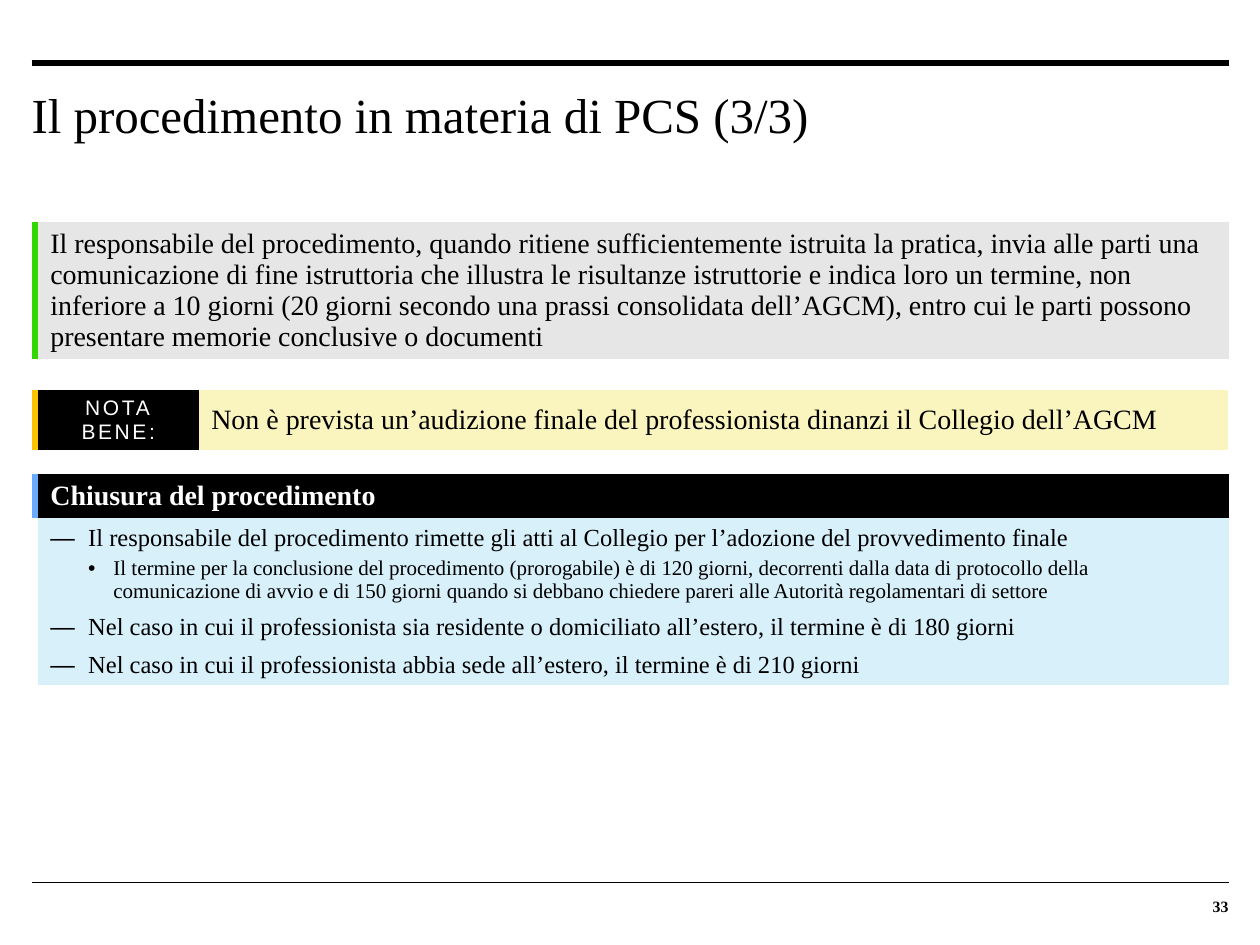
import pptx
import pptx.dml.color
import pptx.enum.shapes
import pptx.enum.text
import pptx.oxml.ns
import pptx.util
from lxml import etree

Pt = pptx.util.Pt
qn = pptx.oxml.ns.qn
ALIGN = pptx.enum.text.PP_ALIGN
ANCHOR = pptx.enum.text.MSO_ANCHOR

COLORS = {
    "black": "000000", "white": "FFFFFF",
    "green": "32D700", "gray": "E6E6E6",
    "amber": "FCC300", "yellow": "FAF5BE",
    "blue": "68ABFF", "light_blue": "D7F0FA",
}
SERIF, SANS = "Times New Roman", "Arial"
LEFT, WIDTH, STRIPE = 18, 684, 3.6
NO_STYLE = "{2D5ABB26-0587-4C30-8999-92F81FD0307C}"

# Bullet levels: mark, left margin, hanging indent, text size
DASH = ("—", 21.6, 21.6, 14)
DOT = ("•", 36, 14.4, 12)
CLOSING_POINTS = [
    (DASH, 3, "Il responsabile del procedimento rimette gli atti al Collegio per "
              "l’adozione del provvedimento finale"),
    (DOT, 6, "Il termine per la conclusione del procedimento (prorogabile) è di 120 giorni, "
             "decorrenti dalla data di protocollo della comunicazione di avvio e di 150 giorni "
             "quando si debbano chiedere pareri alle Autorità regolamentari di settore"),
    (DASH, 6, "Nel caso in cui il professionista sia residente o domiciliato all’estero, "
              "il termine è di 180 giorni"),
    (DASH, 3, "Nel caso in cui il professionista abbia sede all’estero, "
              "il termine è di 210 giorni"),
]
END_NOTICE = (
    "Il responsabile del procedimento, quando ritiene sufficientemente istruita la pratica, "
    "invia alle parti una comunicazione di fine istruttoria che illustra le risultanze "
    "istruttorie e indica loro un termine, non inferiore a 10 giorni (20 giorni secondo una "
    "prassi consolidata dell’AGCM), entro cui le parti possono presentare memorie conclusive "
    "o documenti"
)


def rgb(name):
    return pptx.dml.color.RGBColor.from_string(COLORS[name])


def apply(target, values):
    for name, value in values.items():
        setattr(target, name, value)


def write(paragraph, text, size, color="black", font=SERIF, bold=False, align=ALIGN.LEFT):
    paragraph.alignment = align
    run = paragraph.add_run()
    run.text = text
    apply(run.font, {"name": font, "size": Pt(size), "bold": bold})
    run.font.color.rgb = rgb(color)
    return run


def format_frame(frame, anchor):
    apply(frame, {"margin_left": 0, "margin_right": 0, "margin_top": 0, "margin_bottom": 0,
                  "word_wrap": True, "vertical_anchor": anchor,
                  "auto_size": pptx.enum.text.MSO_AUTO_SIZE.NONE})


def add_rule(slide, top, weight):
    line = slide.shapes.add_connector(pptx.enum.shapes.MSO_CONNECTOR.STRAIGHT,
                                      Pt(LEFT), Pt(top), Pt(LEFT + WIDTH), Pt(top))
    line.line.width = Pt(weight)
    line.line.color.rgb = rgb("black")
    etree.SubElement(line._element.spPr, qn("a:effectLst"))


def fill_cell(cell, color):
    cell.fill.solid()
    cell.fill.fore_color.rgb = rgb(color)


def add_band(slide, top, stripe_color, widths, heights):
    """Add a table with a thin coloured stripe at its left and return it."""
    table = slide.shapes.add_table(len(heights), len(widths) + 1, Pt(LEFT), Pt(top),
                                   Pt(WIDTH), Pt(sum(heights))).table
    apply(table, {"first_row": False, "horz_banding": False})
    table._tbl.tblPr.find(qn("a:tableStyleId")).text = NO_STYLE
    for column, width in zip(table.columns, [STRIPE, *widths]):
        column.width = Pt(width)
    for row, height in zip(table.rows, heights):
        row.height = Pt(height)
        for cell in row.cells:
            cell.vertical_anchor = ANCHOR.MIDDLE
        # Small end mark so that the empty stripe cell does not stretch the row
        stripe = row.cells[0]
        apply(stripe, {"margin_left": 0, "margin_right": 0})
        end_mark = etree.SubElement(stripe.text_frame.paragraphs[0]._p, qn("a:endParaRPr"))
        end_mark.set("sz", "800")
    fill_cell(table.cell(0, 0), stripe_color)
    return table


def write_cell(cell, fill, text, size, **style):
    fill_cell(cell, fill)
    return write(cell.text_frame.paragraphs[0], text, size, **style)


def write_bullets(cell, points):
    frame = cell.text_frame
    for index, ((mark, margin, hanging, size), after, text) in enumerate(points):
        paragraph = frame.add_paragraph() if index else frame.paragraphs[0]
        paragraph.space_after = Pt(after)
        properties = paragraph._p.get_or_add_pPr()
        properties.set("marL", str(Pt(margin)))
        properties.set("indent", str(-Pt(hanging)))
        etree.SubElement(properties, qn("a:buFont")).set("typeface", SANS)
        etree.SubElement(properties, qn("a:buChar")).set("char", mark)
        write(paragraph, text, size)


def add_title(slide, text):
    title = slide.shapes.title
    apply(title, {"left": Pt(LEFT), "top": Pt(48.24), "width": Pt(WIDTH), "height": Pt(71.28)})
    format_frame(title.text_frame, ANCHOR.TOP)
    write(title.text_frame.paragraphs[0], text, 28)


def add_page_number(slide, text):
    box = slide.shapes.add_textbox(Pt(654), Pt(507), Pt(48), Pt(16.5))
    format_frame(box.text_frame, ANCHOR.BOTTOM)
    write(box.text_frame.paragraphs[0], text, 9, bold=True, align=ALIGN.RIGHT)


def main():
    presentation = pptx.Presentation()
    apply(presentation, {"slide_width": Pt(720), "slide_height": Pt(540)})
    slide = presentation.slides.add_slide(presentation.slide_layouts[5])

    # Frame of the page
    add_page_number(slide, "33")
    add_rule(slide, 36, 3)
    add_rule(slide, 504.5, 0.5)
    add_title(slide, "Il procedimento in materia di PCS (3/3)")

    # End of the inquiry
    notice = add_band(slide, 126.8, "green", [680.4], [78.2])
    write_cell(notice.cell(0, 1), "gray", END_NOTICE, 16)

    # Nota bene
    remark = add_band(slide, 223, "amber", [92, 588.4], [34.2])
    label = write_cell(remark.cell(0, 1), "black", "NOTA BENE:", 12, color="white",
                       font=SANS, align=ALIGN.CENTER)
    label.font._element.set("spc", "150")
    write_cell(remark.cell(0, 2), "yellow",
               "Non è prevista un’audizione finale del professionista dinanzi "
               "il Collegio dell’AGCM", 16)

    # Closing of the procedure
    closing = add_band(slide, 270.9, "blue", [680.4], [25, 95.4])
    write_cell(closing.cell(0, 1), "black", "Chiusura del procedimento", 16,
               color="white", bold=True)
    fill_cell(closing.cell(1, 1), "light_blue")
    write_bullets(closing.cell(1, 1), CLOSING_POINTS)

    presentation.save("out.pptx")


if __name__ == "__main__":
    main()
